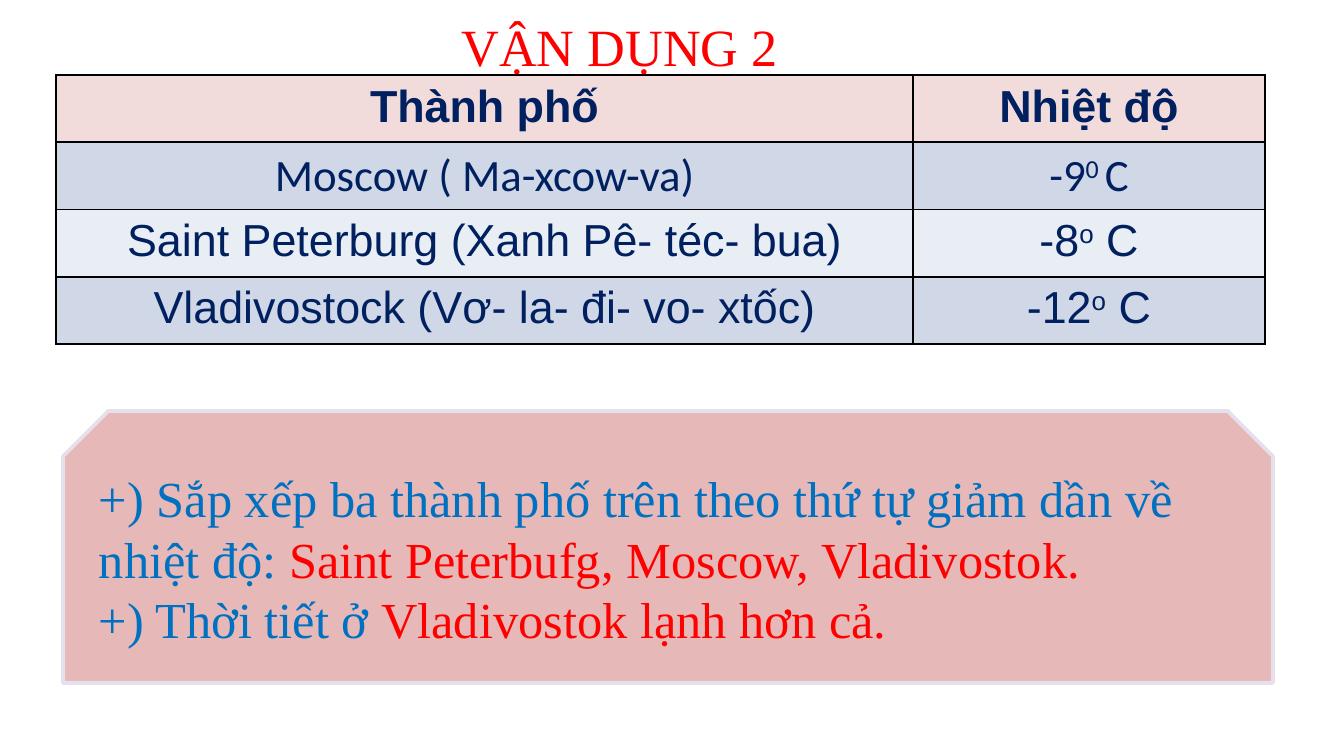
from lxml.etree import SubElement
from pptx import Presentation
from pptx.dml.color import RGBColor
from pptx.enum.shapes import MSO_SHAPE
from pptx.enum.text import MSO_ANCHOR, MSO_AUTO_SIZE, PP_ALIGN
from pptx.oxml.ns import qn
from pptx.util import Pt

EMU_PER_PX = 9144000 / 1344

RED = RGBColor(0xFF, 0x00, 0x00)
BLUE = RGBColor(0x00, 0x70, 0xC0)
NAVY = RGBColor(0x00, 0x20, 0x60)
ROSE = RGBColor(0xE6, 0xB9, 0xB8)
LILAC = RGBColor(0xE6, 0xE0, 0xEC)
PINK = RGBColor(0xF2, 0xDC, 0xDB)
BAND_DARK = RGBColor(0xD0, 0xD8, 0xE8)
BAND_LIGHT = RGBColor(0xE9, 0xED, 0xF4)

ROWS = [
    ("Thành phố", [("Nhiệt độ", {})], PINK, {"bold": True}),
    ("Moscow ( Ma-xcow-va)", [("-9", {}), ("0 ", {"raised": True}), ("C", {})],
     BAND_DARK, {"font": "Calibri"}),
    ("Saint Peterburg (Xanh Pê- téc- bua)",
     [("-8", {}), ("o", {"raised": True}), (" C", {})], BAND_LIGHT, {}),
    ("Vladivostock (Vơ- la- đi- vo- xtốc)",
     [("-12", {}), ("o", {"raised": True}), (" C", {})], BAND_DARK, {}),
]
ANSWERS = [
    [("+) Sắp xếp ba thành phố trên theo thứ tự giảm dần về nhiệt độ: ", {"color": BLUE}),
     ("Saint Peterbufg, Moscow, Vladivostok.", {"color": RED})],
    [("+) Thời tiết ở ", {"color": BLUE}),
     ("Vladivostok lạnh hơn cả.", {"color": RED})],
]


def px(n):
    """Turn pixels into EMU."""
    return round(n * EMU_PER_PX)


def add_run(p, text, *, font, size, color, bold=False, raised=False):
    """Append a formatted run to a paragraph."""
    r = p.add_run()
    r.text = text
    r.font.name = font
    r.font.size = Pt(size)
    r.font.bold = bold
    r.font.color.rgb = color
    if raised:
        r._r.get_or_add_rPr().set("baseline", "30000")


class Deck:
    """Hold the text styles and the current slide."""

    serif = {"font": "Times New Roman", "size": 27}
    cell = {"font": "Arial", "size": 24, "color": NAVY}

    def __init__(self, prs):
        """Start a title-only slide."""
        self.s = prs.slides.add_slide(prs.slide_layouts[5])

    def title(self, text, x, y, w, h):
        """Place and format the title."""
        sp = self.s.shapes.title
        sp.left, sp.top, sp.width, sp.height = map(px, (x, y, w, h))
        tf = sp.text_frame
        tf.word_wrap = False
        tf.auto_size = MSO_AUTO_SIZE.SHAPE_TO_FIT_TEXT
        tf.vertical_anchor = MSO_ANCHOR.TOP
        p = tf.paragraphs[0]
        p.alignment = PP_ALIGN.CENTER
        add_run(p, text, **{**self.serif, "size": 28, "color": RED})

    def panel(self, paragraphs, x, y, w, h):
        """Add the snipped panel with its paragraphs."""
        sp = self.s.shapes.add_shape(MSO_SHAPE.SNIP_2_SAME_RECTANGLE, *map(px, (x, y, w, h)))
        sp.shadow.inherit = False
        sp.fill.solid()
        sp.fill.fore_color.rgb = ROSE
        sp.line.color.rgb = LILAC
        sp.line.width = Pt(2)
        tf = sp.text_frame
        tf.word_wrap = True
        tf.vertical_anchor = MSO_ANCHOR.MIDDLE
        for i, runs in enumerate(paragraphs):
            p = tf.add_paragraph() if i else tf.paragraphs[0]
            p.alignment = PP_ALIGN.LEFT
            for text, style in runs:
                add_run(p, text, **{**self.serif, **style})

    def fill_cell(self, cell, runs, fill, style):
        """Write one bordered, filled cell."""
        tc_pr = cell._tc.get_or_add_tcPr()
        for side in ("lnL", "lnR", "lnT", "lnB"):
            ln = SubElement(tc_pr, qn(f"a:{side}"), w=str(Pt(1)))
            SubElement(SubElement(ln, qn("a:solidFill")), qn("a:srgbClr"), val="000000")
        cell.fill.solid()
        cell.fill.fore_color.rgb = fill
        p = cell.text_frame.paragraphs[0]
        p.alignment = PP_ALIGN.CENTER
        for text, extra in runs:
            add_run(p, text, **{**self.cell, **style, **extra})

    def table(self, rows, x, y, widths, row_h):
        """Add the temperature table."""
        box = (x, y, sum(widths), row_h * len(rows))
        tbl = self.s.shapes.add_table(len(rows), len(widths), *map(px, box)).table
        for col, w in zip(tbl.columns, widths):
            col.width = px(w)
        for i, (city, degrees, fill, style) in enumerate(rows):
            tbl.rows[i].height = px(row_h)
            self.fill_cell(tbl.cell(i, 0), [(city, {})], fill, style)
            self.fill_cell(tbl.cell(i, 1), degrees, fill, style)


def main():
    """Build and save the slide."""
    prs = Presentation()
    prs.slide_width, prs.slide_height = px(1344), px(756)
    deck = Deck(prs)
    deck.panel(ANSWERS, 63, 411, 1210, 272)
    deck.title("VẬN DỤNG 2", 448, 8, 343, 77)
    deck.table(ROWS, 56, 75, (857, 352), 67)
    prs.save("out.pptx")


if __name__ == "__main__":
    main()
